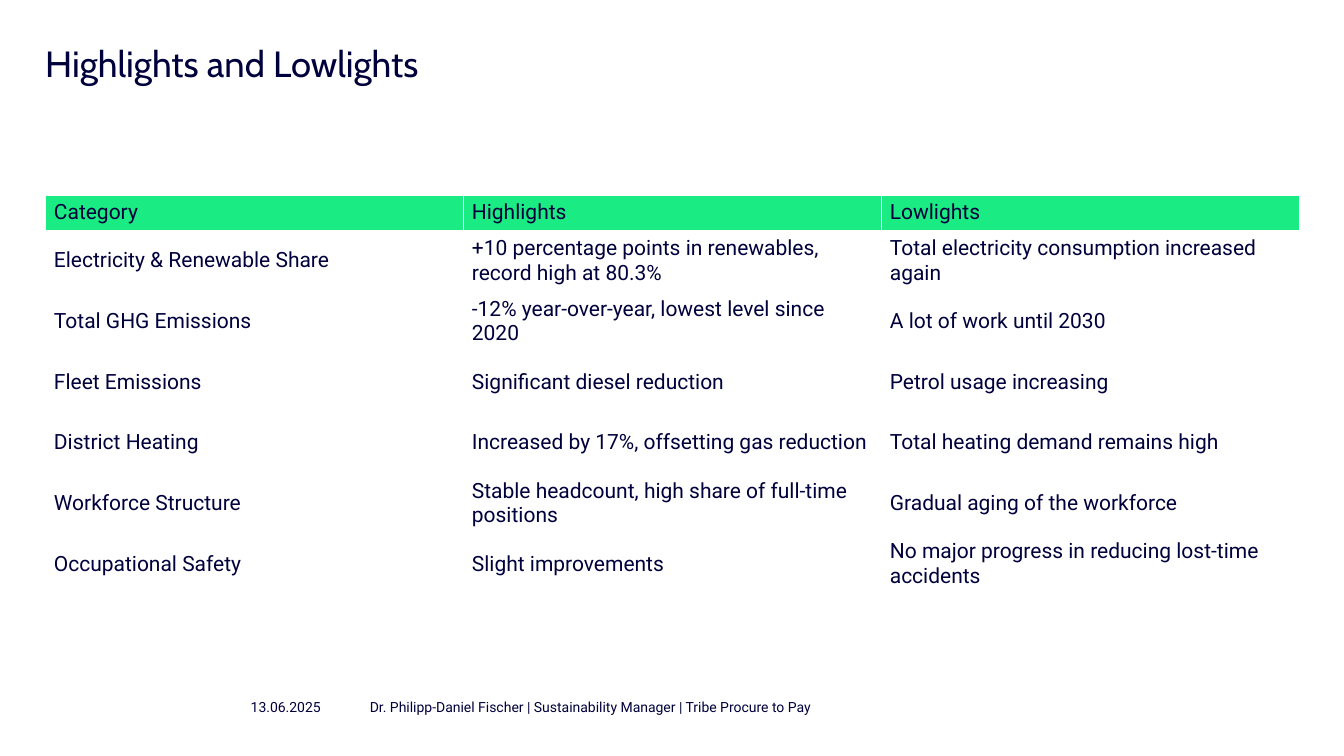
from pptx import Presentation
from pptx.dml.color import RGBColor
from pptx.enum.text import MSO_ANCHOR, MSO_AUTO_SIZE
from pptx.util import Cm, Pt

# Content
TITLE = "Highlights and Lowlights"
ROWS = [
    ("Category", "Highlights", "Lowlights"),
    ("Electricity & Renewable Share",
     "+10 percentage points in renewables, record high at 80.3%",
     "Total electricity consumption increased again"),
    ("Total GHG Emissions",
     "-12% year-over-year, lowest level since 2020",
     "A lot of work until 2030"),
    ("Fleet Emissions", "Significant diesel reduction", "Petrol usage increasing"),
    ("District Heating",
     "Increased by 17%, offsetting gas reduction",
     "Total heating demand remains high"),
    ("Workforce Structure",
     "Stable headcount, high share of full-time positions",
     "Gradual aging of the workforce"),
    ("Occupational Safety",
     "Slight improvements",
     "No major progress in reducing lost-time accidents"),
]
# Footer: text, left and width in cm
FOOTER = [
    ("13.06.2025", 6.32, 2.01),
    ("Dr. Philipp-Daniel Fischer | Sustainability Manager | Tribe Procure to Pay",
     9.32, 16.2),
]

# Style and layout
NAVY = RGBColor(0x00, 0x00, 0x3C)
GREEN = RGBColor(0x1B, 0xEB, 0x83)
LEFT, WIDTH = Cm(1.14), Cm(31.6)
TABLE_TOP, HEADER_H, ROW_H = Cm(4.92), Cm(0.88), Cm(1.53)


def style_text(tf, size, font, anchor):
    """Format every run of a frame that holds no inner margins."""
    tf.margin_left = tf.margin_right = tf.margin_top = tf.margin_bottom = 0
    tf.word_wrap = True
    tf.vertical_anchor = anchor
    for p in tf.paragraphs:
        style_runs(p, size, font)


def style_runs(p, size, font):
    for r in p.runs:
        r.font.size = Pt(size)
        r.font.name = font
        r.font.bold = False
        r.font.color.rgb = NAVY


def main():
    prs = Presentation()
    prs.slide_width, prs.slide_height = Cm(33.87), Cm(19.05)
    s = prs.slides.add_slide(prs.slide_layouts.get_by_name("Title Only"))

    # Title
    title = s.shapes.title
    title.left, title.top, title.width, title.height = LEFT, Cm(1.12), WIDTH, Cm(1.07)
    tf = title.text_frame
    tf.text = TITLE
    tf.auto_size = MSO_AUTO_SIZE.NONE
    tf.paragraphs[0].alignment = 1
    tf.paragraphs[0].line_spacing = 0.95
    style_text(tf, 26, "Cabin", MSO_ANCHOR.TOP)

    # Table
    height = HEADER_H + ROW_H * (len(ROWS) - 1)
    table = s.shapes.add_table(
        len(ROWS), len(ROWS[0]), LEFT, TABLE_TOP, WIDTH, height).table
    table.first_row = table.horz_banding = False
    for i, row in enumerate(ROWS):
        table.rows[i].height = ROW_H if i else HEADER_H
        for j, text in enumerate(row):
            cell = table.cell(i, j)
            cell.text = text
            cell.vertical_anchor = MSO_ANCHOR.MIDDLE
            cell.margin_left = cell.margin_right = Cm(0.22)
            cell.margin_top = cell.margin_bottom = Cm(0.11)
            if i == 0:
                cell.fill.solid()
                cell.fill.fore_color.rgb = GREEN
            else:
                cell.fill.background()
            style_runs(cell.text_frame.paragraphs[0], 15, "Roboto")

    # Footer
    for text, left, width in FOOTER:
        box = s.shapes.add_textbox(Cm(left), Cm(17.6), Cm(width), Cm(0.43))
        box.text_frame.text = text
        style_text(box.text_frame, 10, "Roboto", MSO_ANCHOR.MIDDLE)

    prs.save("out.pptx")


if __name__ == "__main__":
    main()
